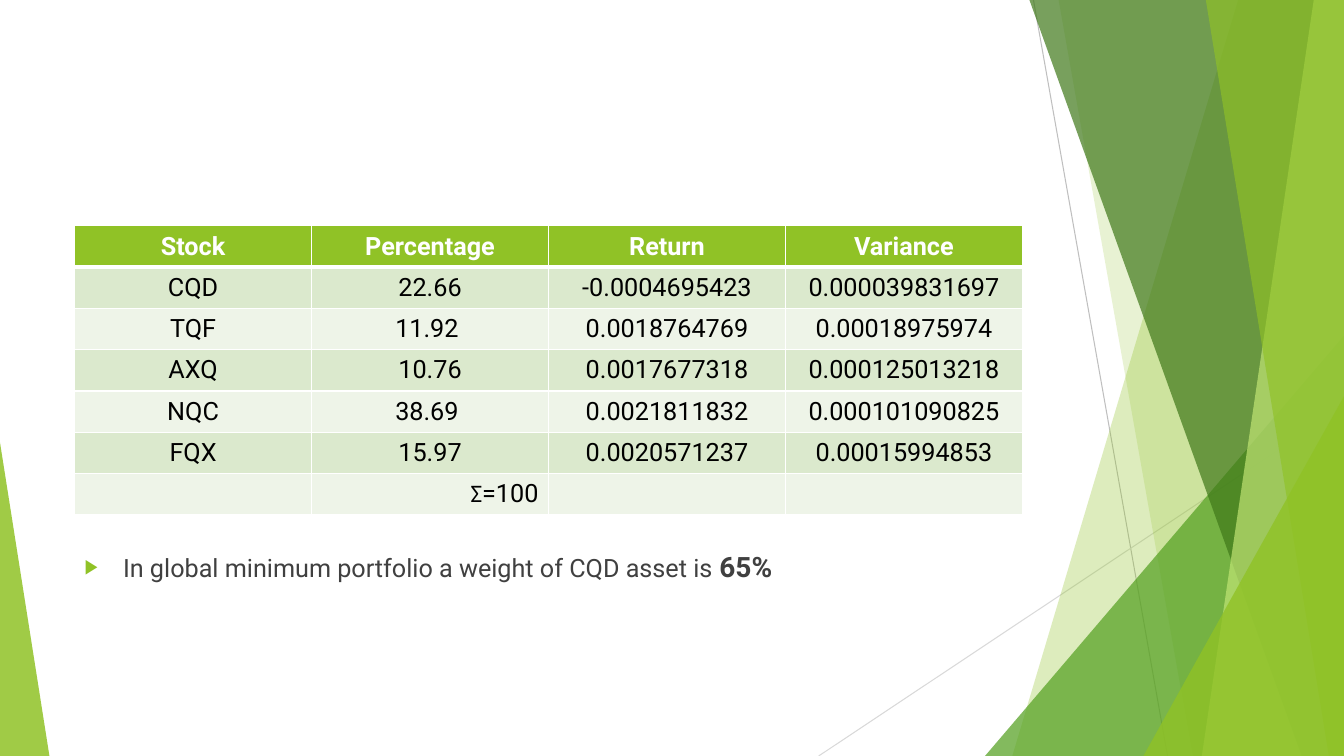
from lxml import etree
from pptx import Presentation
from pptx.dml.color import RGBColor
from pptx.enum.shapes import MSO_CONNECTOR, MSO_SHAPE
from pptx.enum.text import MSO_ANCHOR, MSO_AUTO_SIZE, PP_ALIGN
from pptx.oxml.ns import qn
from pptx.util import Inches, Pt

STRAIGHT = MSO_CONNECTOR.STRAIGHT
WEDGE = MSO_SHAPE.ISOSCELES_TRIANGLE
MIDDLE, NONE = MSO_ANCHOR.MIDDLE, MSO_AUTO_SIZE.NONE
CENTER, RIGHT = PP_ALIGN.CENTER, PP_ALIGN.RIGHT
W, H = 13.33, 7.5
LEFT, TOP, WIDTH = 0.74, 2.24, 9.4
ROW = 0.41
GREEN, WHITE, BLACK, GRAY = "90C226", "FFFFFF", "000000", "404040"


def paint(fill, color, alpha=100):
    """Make a fill solid, with alpha as a percentage of opacity."""
    fill.solid()
    fill.fore_color.rgb = RGBColor.from_string(color)
    if alpha < 100:
        tone = fill._xPr.find(qn("a:solidFill"))[0]
        etree.SubElement(tone, qn("a:alpha"), val=str(alpha * 1000))


def write(para, text, color, **looks):
    """Add a run with the given font values."""
    run = para.add_run()
    run.text = text
    for name, value in {"name": "Roboto", "size": Pt(18), "bold": False, **looks}.items():
        setattr(run.font, name, value)
    paint(run.font.fill, color)


deck = Presentation()
deck.slide_width, deck.slide_height = Inches(W), Inches(H)
slide = deck.slides.add_slide(deck.slide_layouts[1])
shapes = slide.shapes
title = shapes.title.element
title.getparent().remove(title)

# Thin lines behind the green bands
for x1, y1, x2, y2, color in [(10.25, 0, 11.58, H, "BFBFBF"), (W, 4.03, 8.12, H, "D9D9D9")]:
    line = shapes.add_connector(STRAIGHT, *map(Inches, (x1, y1, x2, y2)))
    line.line.width = Pt(0.75)
    paint(line.line.fill, color)
    etree.SubElement(line.element.spPr, qn("a:effectLst"))

# Bands run from head to foot along the right edge: (head x, foot x).
# Wedges stand on the foot of the slide: (left, top, width, apex).
decor = [
    ((12.28, 10.04), GREEN, 30),
    ((10.5, 11.83), GREEN, 20),
    ((9.77, 3.33, 3.56, 1), "54A021", 72),
    ((10.21, 12.91), "3F7819", 70),
    ((13.03, 11.92), "C0E474", 70),
    ((11.96, 13.18), GREEN, 65),
    ((11.34, 3.93, 1.99, 1), GREEN, 80),
    ((0, 4.39, 0.49, 0), GREEN, 85),
]
for place, color, alpha in decor:
    if len(place) == 2:
        head, foot, right, base = map(Inches, (*place, W, H))
        outline = shapes.build_freeform(head, 0)
        outline.add_line_segments([(right, 0), (right, base), (foot, base)])
        shape = outline.convert_to_shape()
    else:
        left, top, width, apex = place
        shape = shapes.add_shape(WEDGE, *map(Inches, (left, top, width, H - top)))
        shape.adjustments[0] = apex
    shape.shadow.inherit = False
    shape.line.fill.background()
    paint(shape.fill, color, alpha)

# Remark below the table
body = slide.placeholders[1]
for name, value in zip(("left", "top", "width", "height"), (LEFT, 5.22, WIDTH, 0.8)):
    setattr(body, name, Inches(value))
frame = body.text_frame
frame.auto_size, frame.vertical_anchor = NONE, MIDDLE
remark = frame.paragraphs[0]
remark.space_before = Pt(0)
write(remark, "In global minimum portfolio a weight of CQD asset is ", GRAY)
write(remark, "65%", GRAY, size=Pt(20), bold=True)
props = remark._p.get_or_add_pPr()
props.set("marL", str(Inches(0.38)))
props.set("indent", str(-Inches(0.38)))
tint = etree.SubElement(props, qn("a:buClr"))
etree.SubElement(tint, qn("a:srgbClr"), val=GREEN)
etree.SubElement(props, qn("a:buSzPct"), val="80000")
etree.SubElement(props, qn("a:buChar"), char="▶")

# Table of stocks
rows = [
    ("Stock", "Percentage", "Return", "Variance"),
    ("CQD", "22.66", "-0.0004695423", "0.000039831697"),
    ("TQF", "11.92 ", "0.0018764769", "0.00018975974"),
    ("AXQ", "10.76", "0.0017677318", "0.000125013218"),
    ("NQC", "38.69 ", "0.0021811832", "0.000101090825"),
    ("FQX", "15.97", "0.0020571237", "0.00015994853"),
    ("", "Σ=100", "", ""),
]
size = map(Inches, (LEFT, TOP, WIDTH, ROW * len(rows)))
table = shapes.add_table(len(rows), len(rows[0]), *size).table
for r, row in enumerate(rows):
    table.rows[r].height = Inches(ROW)
    for c, text in enumerate(row):
        cell = table.cell(r, c)
        cell.vertical_anchor = MIDDLE
        tc = cell._tc.get_or_add_tcPr()
        for side in "LRTB":
            thick = (r, side) in [(0, "B"), (1, "T")]
            edge = etree.SubElement(tc, qn("a:ln" + side), w=str(Pt(3 if thick else 1)))
            solid = etree.SubElement(edge, qn("a:solidFill"))
            etree.SubElement(solid, qn("a:srgbClr"), val=WHITE)
        paint(cell.fill, GREEN if r == 0 else ("EEF4E8", "DBE9CD")[r % 2])
        para = cell.text_frame.paragraphs[0]
        para.font.size = Pt(18)
        para.alignment = CENTER
        if text.startswith("Σ"):
            para.alignment = RIGHT
            write(para, text[0], BLACK, name="Calibri")
            write(para, text[1:], BLACK)
        elif text:
            write(para, text, BLACK if r else WHITE, bold=r == 0)

deck.save("out.pptx")
